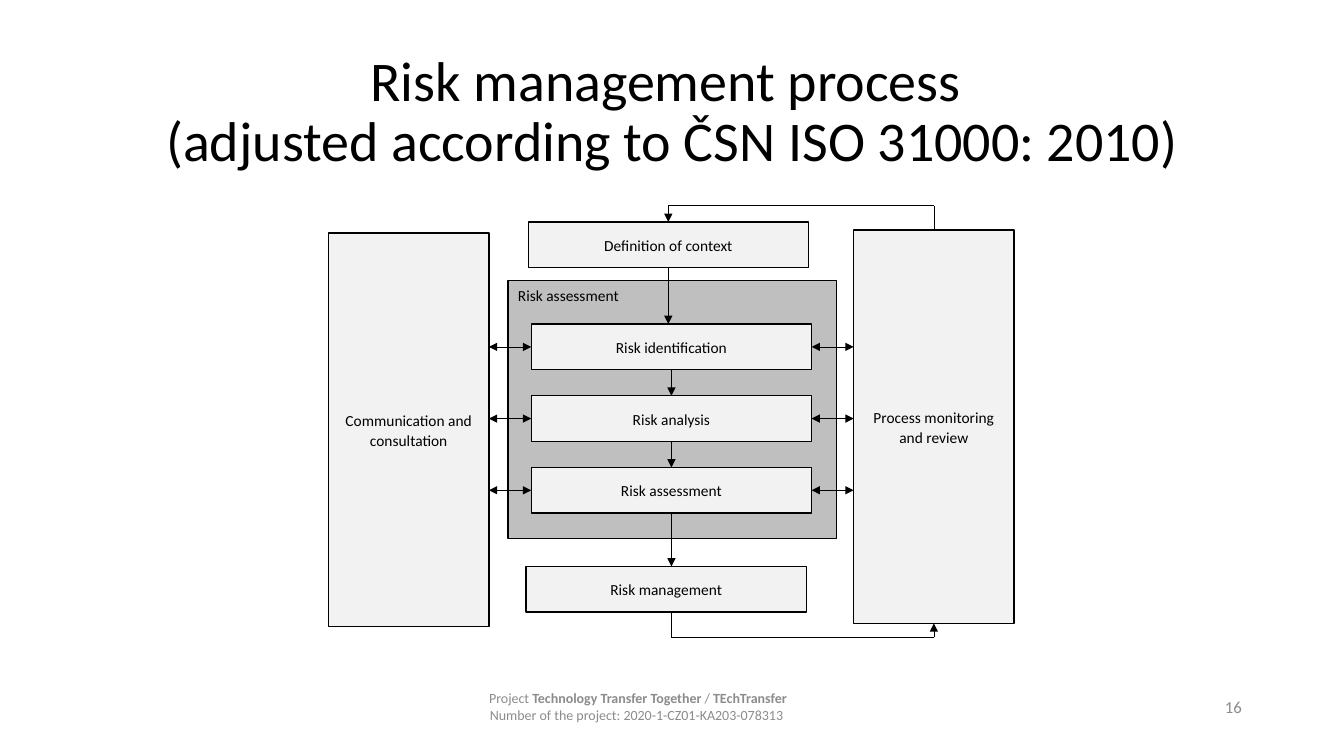
import pptx
import pptx.util
import pptx.dml.color
import pptx.oxml
import pptx.oxml.ns
from pptx.enum.shapes import MSO_CONNECTOR, MSO_SHAPE
from pptx.enum.text import MSO_ANCHOR, PP_ALIGN

Pt = pptx.util.Pt
FONT = "Calibri"
COLORS = {"ink": "000000", "box": "F2F2F2", "group": "BFBFBF", "footer": "8C8C8C"}
TOP, LEFT, BOTTOM, RIGHT = 0, 1, 2, 3

TITLE = "Risk management process \v(adjusted according to ČSN ISO 31000: 2010)"
FOOTER = [
    [("Project ", False), ("Technology Transfer Together", True),
     (" / ", False), ("TEchTransfer", True)],
    [("Number of the project: 2020-1-CZ01-KA203-078313 ", False)],
]
PAGE = "16"
STEPS = ["Risk identification", "Risk analysis", "Risk assessment"]

# left, top, width, height in points
TITLE_AT = (66, 28.8, 828, 104.4)
PAGE_AT = (830.2, 490.3, 64, 28.8)
FOOTER_AT = (318.2, 490.3, 275, 28)
GROUP_AT = (362.9, 200.2, 234.7, 184.5)
CONSULT_AT = (234.7, 166.5, 114.5, 281)
REVIEW_AT = (609.8, 164.3, 114.5, 281)
BOX_W, BOX_H = 200.2, 32.6
CONTEXT_AT = (377.3, 158.6, BOX_W, BOX_H)
MANAGE_AT = (375.8, 404.6, BOX_W, BOX_H)
STEP_X, STEP_Y, STEP_PITCH = 379.5, 231.5, 51.2
LOOP_TOP, LOOP_BOTTOM = 146.9, 455

prs = pptx.Presentation()
prs.slide_width, prs.slide_height = Pt(960), Pt(540)
s = prs.slides.add_slide(prs.slide_layouts[6])


def rgb(name):
    return pptx.dml.color.RGBColor.from_string(COLORS[name])


def style(p, size, color, align, spacing=1.0):
    p.font.name, p.font.size = FONT, Pt(size)
    p.font.color.rgb = rgb(color)
    p.alignment, p.line_spacing = align, spacing


def text_box(at, paragraphs, size, color, align, spacing=1.0):
    """Each paragraph is a string or a list of (text, bold) runs."""
    tf = s.shapes.add_textbox(*map(Pt, at)).text_frame
    tf.word_wrap, tf.vertical_anchor = True, MSO_ANCHOR.MIDDLE
    for i, content in enumerate(paragraphs):
        p = tf.add_paragraph() if i else tf.paragraphs[0]
        if isinstance(content, str):
            p.text = content
        else:
            for text, bold in content:
                r = p.add_run()
                r.text, r.font.bold = text, bold
        style(p, size, color, align, spacing)


def box(at, text, fill="box", align=PP_ALIGN.CENTER, anchor=MSO_ANCHOR.MIDDLE,
        spacing=1.04):
    sp = s.shapes.add_shape(MSO_SHAPE.RECTANGLE, *map(Pt, at))
    sp.shadow.inherit = False
    sp.fill.solid()
    sp.fill.fore_color.rgb = rgb(fill)
    sp.line.color.rgb, sp.line.width = rgb("ink"), Pt(1)
    tf = sp.text_frame
    tf.word_wrap, tf.vertical_anchor = True, anchor
    tf.text = text
    style(tf.paragraphs[0], 11, "ink", align, spacing)
    return sp


def line(start, end, heads=()):
    """Each end is an (x, y) point or a (shape, side) joint."""
    joints = [isinstance(e[0], (int, float)) for e in (start, end)]
    a = start if joints[0] else (0, 0)
    b = end if joints[1] else (0, 0)
    c = s.shapes.add_connector(MSO_CONNECTOR.STRAIGHT, *map(Pt, a + b))
    if not joints[0]:
        c.begin_connect(*start)
    if not joints[1]:
        c.end_connect(*end)
    c.line.color.rgb, c.line.width = rgb("ink"), Pt(0.5)
    ln = c.line._get_or_add_ln()
    for head in heads:
        pptx.oxml.ns.qn("a:" + head)
        ln.append(pptx.oxml.parse_xml(
            f'<a:{head} {pptx.oxml.ns.nsdecls("a")} type="triangle"/>'))
    c._element.spPr.append(pptx.oxml.parse_xml(
        f'<a:effectLst {pptx.oxml.ns.nsdecls("a")}/>'))


ARROW, BOTH = ("tailEnd",), ("headEnd", "tailEnd")

text_box(TITLE_AT, [TITLE], 40, "ink", PP_ALIGN.CENTER, 0.9)
text_box(PAGE_AT, [PAGE], 12, "footer", PP_ALIGN.RIGHT)
text_box(FOOTER_AT, FOOTER, 10, "footer", PP_ALIGN.CENTER)

box(GROUP_AT, "Risk assessment", "group", PP_ALIGN.LEFT, MSO_ANCHOR.TOP, 1.07)
box(CONSULT_AT, "Communication and consultation", spacing=1.07)
review = box(REVIEW_AT, "Process monitoring and review", spacing=1.07)
context = box(CONTEXT_AT, "Definition of context")
manage = box(MANAGE_AT, "Risk management")
steps = [box((STEP_X, STEP_Y + i * STEP_PITCH, BOX_W, BOX_H), name)
         for i, name in enumerate(STEPS)]

consult_edge = CONSULT_AT[0] + CONSULT_AT[2]
for i, step in enumerate(steps):
    y = STEP_Y + i * STEP_PITCH + BOX_H / 2
    line((step, LEFT), (consult_edge, y), BOTH)
    line((REVIEW_AT[0], y), (step, RIGHT), BOTH)

context_x = CONTEXT_AT[0] + BOX_W / 2
step_x = STEP_X + BOX_W / 2
review_x = REVIEW_AT[0] + REVIEW_AT[2] / 2
line((context, BOTTOM), (context_x, STEP_Y), ARROW)
for upper, lower in zip(steps, steps[1:]):
    line((upper, BOTTOM), (lower, TOP), ARROW)
line((steps[-1], BOTTOM), (step_x, MANAGE_AT[1]), ARROW)

line((review, TOP), (review_x, LOOP_TOP))
line((review_x, LOOP_TOP), (context_x, LOOP_TOP))
line((context_x, LOOP_TOP), (context, TOP), ARROW)
line((step_x, MANAGE_AT[1] + BOX_H), (step_x, LOOP_BOTTOM))
line((step_x, LOOP_BOTTOM), (review_x, LOOP_BOTTOM))
line((review_x, LOOP_BOTTOM), (review, BOTTOM), ARROW)

prs.save("out.pptx")
